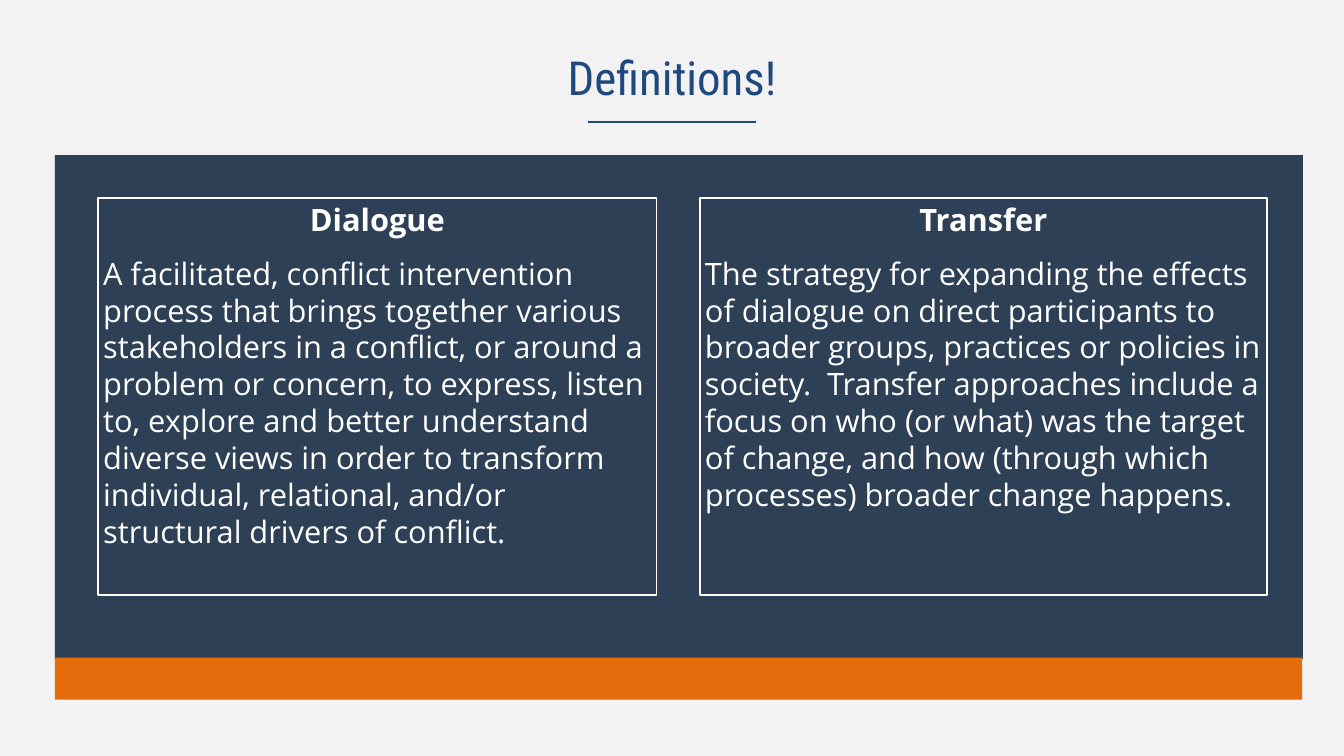
from dataclasses import dataclass

import pptx
import pptx.util
import pptx.dml.color
import pptx.enum.dml
import pptx.enum.shapes
import pptx.enum.text
import lxml.etree

W, H = 26.67, 15
COLORS = {"page": "F2F2F2", "navy": "2D4055", "blue": "1F497D",
          "orange": "E46C0A", "white": "FFFFFF"}
ALIGN = pptx.enum.text.PP_ALIGN


@dataclass
class Definition:
    term: str
    meaning: str
    left: float
    width: float


def rgb(name: str) -> pptx.dml.color.RGBColor:
    return pptx.dml.color.RGBColor.from_string(COLORS[name])


def share(x: float, y: float) -> tuple:
    """Turn shares of the slide's width and height into lengths."""
    return pptx.util.Inches(x * W), pptx.util.Inches(y * H)


def add_text(p, text: str, *, size: float, font: str, color: str,
             bold: bool = False, align=ALIGN.LEFT, after: float = 0) -> None:
    p.alignment = align
    p.space_before, p.space_after = pptx.util.Pt(0), pptx.util.Pt(after)
    r = p.add_run()
    r.text = text
    r.font.size, r.font.name, r.font.bold = pptx.util.Pt(size), font, bold
    r.font.color.rgb = rgb(color)


def add_rect(s, left: float, top: float, width: float, height: float):
    sp = s.shapes.add_shape(pptx.enum.shapes.MSO_SHAPE.RECTANGLE,
                            *share(left, top), *share(width, height))
    sp.shadow.inherit = False
    sp.line.fill.background()
    return sp


def add_definition(s, d: Definition) -> None:
    sp = add_rect(s, d.left / W, 3.93 / H, d.width / W, 7.88 / H)
    sp.fill.background()
    sp.line.color.rgb = rgb("white")
    sp.line.width = pptx.util.Pt(2.5)
    tf = sp.text_frame
    tf.word_wrap = True
    tf.vertical_anchor = pptx.enum.text.MSO_ANCHOR.TOP
    style = dict(size=44, font="Open Sans", color="white")
    add_text(tf.paragraphs[0], d.term, bold=True, align=ALIGN.CENTER, after=24, **style)
    add_text(tf.add_paragraph(), d.meaning, **style)


DEFINITIONS = [
    Definition("Dialogue",
               "A facilitated, conflict intervention process that brings together "
               "various stakeholders in a conflict, or around a problem or concern, "
               "to express, listen to, explore and better understand diverse views "
               "in order to transform individual, relational, and/or structural "
               "drivers of conflict.", 1.95, 11.08),
    Definition("Transfer",
               "The strategy for expanding the effects of dialogue on direct "
               "participants to broader groups, practices or policies in society.  "
               "Transfer approaches include a focus on who (or what) was the target "
               "of change, and how (through which processes) broader change happens.",
               13.89, 11.25),
]


def main() -> None:
    prs = pptx.Presentation()
    prs.slide_width, prs.slide_height = share(1, 1)
    s = prs.slides.add_slide(prs.slide_layouts[5])
    s.background.fill.solid()
    s.background.fill.fore_color.rgb = rgb("page")

    # Panel and its base strip
    panel = add_rect(s, 1.09 / W, 3.08 / H, 24.75 / W, 10 / H)
    panel.fill.patterned()
    panel.fill.pattern = pptx.enum.dml.MSO_PATTERN.SMALL_GRID
    panel.fill.fore_color.rgb = rgb("navy")
    panel.fill.back_color.rgb = rgb("blue")
    strip = add_rect(s, 1.09 / W, 13.05 / H, 24.75 / W, 0.83 / H)
    strip.fill.solid()
    strip.fill.fore_color.rgb = rgb("orange")

    # Title and the rule beneath it
    title = s.shapes.title
    title.left, title.top = share(0, 0.92 / H)
    title.width, title.height = share(1, 1.23 / H)
    tf = title.text_frame
    tf.word_wrap = True
    tf.auto_size = pptx.enum.text.MSO_AUTO_SIZE.NONE
    tf.vertical_anchor = pptx.enum.text.MSO_ANCHOR.TOP
    add_text(tf.paragraphs[0], "Definitions!", size=67, font="Roboto Condensed",
             color="blue", align=ALIGN.CENTER)
    rule = s.shapes.add_connector(pptx.enum.shapes.MSO_CONNECTOR.STRAIGHT,
                                  *share(11.67 / W, 2.42 / H), *share(15 / W, 2.42 / H))
    rule.line.color.rgb = rgb("blue")
    rule.line.width = pptx.util.Pt(3)
    lxml.etree.SubElement(
        rule._element.spPr,
        "{http://schemas.openxmlformats.org/drawingml/2006/main}effectLst")

    # Definition boxes
    for d in DEFINITIONS:
        add_definition(s, d)

    prs.save("out.pptx")


if __name__ == "__main__":
    main()
